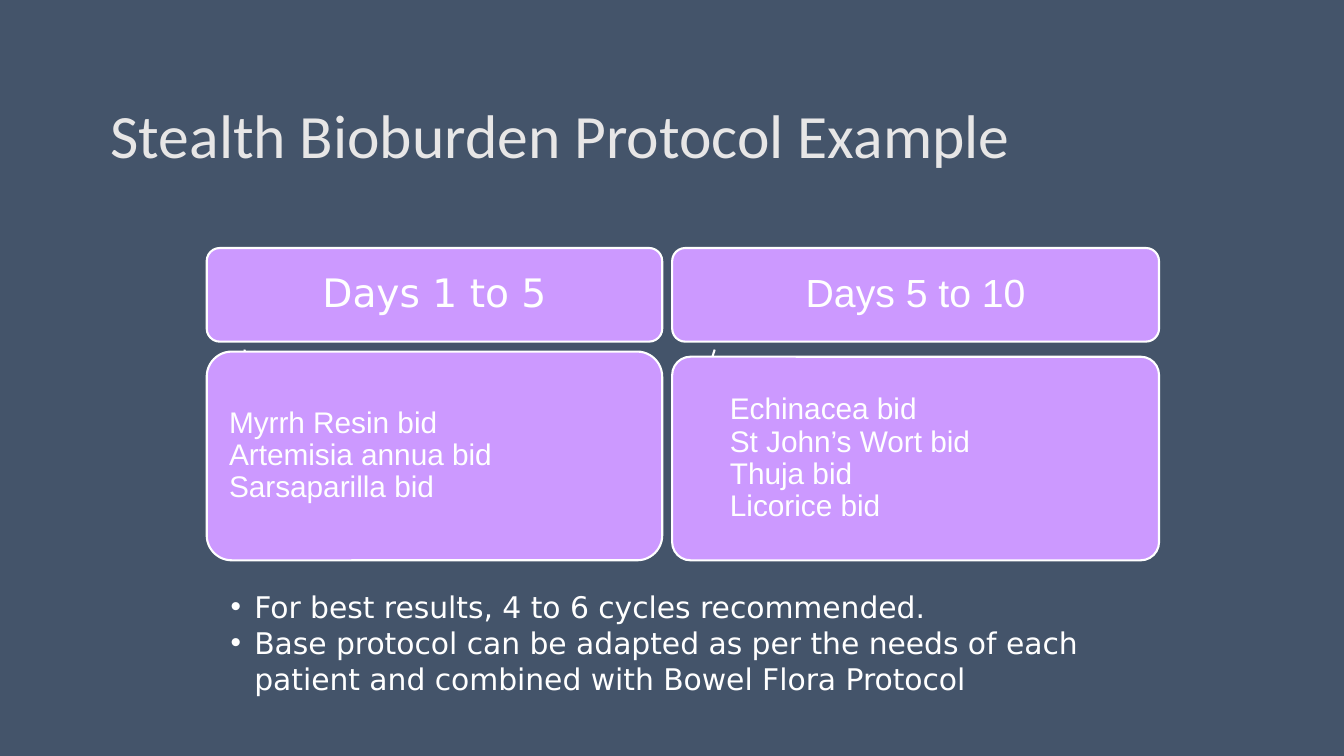
from lxml import etree
from pptx import Presentation
from pptx.dml.color import RGBColor
from pptx.enum.shapes import MSO_CONNECTOR, MSO_SHAPE
from pptx.enum.text import MSO_ANCHOR, PP_ALIGN
from pptx.oxml.ns import qn
from pptx.util import Cm, Pt

ROUNDED = MSO_SHAPE.ROUNDED_RECTANGLE
STRAIGHT = MSO_CONNECTOR.STRAIGHT
MIDDLE, BOTTOM, TOP = MSO_ANCHOR.MIDDLE, MSO_ANCHOR.BOTTOM, MSO_ANCHOR.TOP
LEFT, CENTER = PP_ALIGN.LEFT, PP_ALIGN.CENTER

COLORS = {"background": "44546A", "title": "E7E6E6", "card": "CC99FF", "white": "FFFFFF"}

HEADER_TOP, HEADER_HEIGHT = 6.25, 2.36
BODY_BOTTOM = 14.12
LINK_TOP = 8.81
COLUMNS = [
    {"left": 5.21, "width": 11.48, "header": "Days 1 to 5", "font": "DejaVu Sans",
     "body_top": 8.86, "radius": 0.12, "indent": 0.33, "link": (6.17, 5.56, 11.76),
     "items": ["Myrrh Resin bid", "Artemisia annua bid", "Sarsaparilla bid"]},
    {"left": 16.94, "width": 12.27, "header": "Days 5 to 10", "font": "Arial",
     "body_top": 8.99, "radius": 0.09, "indent": 1.27, "link": (18.01, 17.15, 11.56),
     "items": ["Echinacea bid", "St John’s Wort bid", "Thuja bid", "Licorice bid"]},
]
NOTES = [
    "For best results, 4 to 6 cycles recommended.",
    "Base protocol can be adapted as per the needs of each patient "
    "and combined with Bowel Flora Protocol",
]


def color(name):
    return RGBColor.from_string(COLORS[name])


def write(shape, lines, font, size, fill="white", anchor=MIDDLE, align=LEFT,
          spacing=0.9, indent=0, bullet=False):
    """Fill a shape with one paragraph per line."""
    frame = shape.text_frame
    frame.word_wrap = True
    frame.vertical_anchor = anchor
    for number, line in enumerate(lines):
        para = frame.paragraphs[0] if number == 0 else frame.add_paragraph()
        para.alignment = align
        para.line_spacing = spacing
        span = para.add_run()
        span.text = line
        for key, value in {"name": font, "size": Pt(size)}.items():
            setattr(span.font, key, value)
        span.font.color.rgb = color(fill)
        properties = para._p.get_or_add_pPr()
        properties.set("marL", str(Cm(indent)))
        if bullet:
            properties.set("indent", str(-Cm(indent)))
            etree.SubElement(properties, qn("a:buFont")).set("typeface", "Arial")
            etree.SubElement(properties, qn("a:buChar")).set("char", "•")


def add_text(slide, left, top, width, height, lines, **style):
    box = slide.shapes.add_textbox(Cm(left), Cm(top), Cm(width), Cm(height))
    write(box, lines, **style)


def add_card(slide, left, top, width, height, radius, lines, **style):
    card = slide.shapes.add_shape(ROUNDED, Cm(left), Cm(top), Cm(width), Cm(height))
    card.adjustments[0] = radius
    card.shadow.inherit = False
    card.fill.solid()
    card.fill.fore_color.rgb = color("card")
    card.line.color.rgb = color("white")
    card.line.width = Pt(1.5)
    margins = {"margin_left": 0.05, "margin_right": 0.05,
               "margin_top": 0.1, "margin_bottom": 0.1}
    for key, value in margins.items():
        setattr(card.text_frame, key, Cm(value))
    write(card, lines, **style)


def add_link(slide, start_x, end_x, end_y):
    link = slide.shapes.add_connector(STRAIGHT, Cm(start_x), Cm(LINK_TOP), Cm(end_x), Cm(end_y))
    link.line.color.rgb = color("white")
    link.line.width = Pt(1.5)
    etree.SubElement(link._element.spPr, qn("a:effectLst"))


def add_column(slide, column):
    left, width, top = column["left"], column["width"], column["body_top"]
    add_card(slide, left, HEADER_TOP, width, HEADER_HEIGHT, 0.14,
             [column["header"]], font=column["font"], size=28, align=CENTER)
    # The link runs behind the body card
    add_link(slide, *column["link"])
    add_card(slide, left, top, width, BODY_BOTTOM - top, column["radius"],
             column["items"], font="Arial", size=21.3, indent=column["indent"])


def main():
    deck = Presentation()
    deck.slide_width, deck.slide_height = Cm(33.87), Cm(19.05)
    slide = deck.slides.add_slide(deck.slide_layouts[6])
    slide.background.fill.solid()
    slide.background.fill.fore_color.rgb = color("background")

    # Title
    add_text(slide, 2.54, 1.27, 28.78, 3.18, ["Stealth Bioburden Protocol Example"],
             font="Calibri", size=44, fill="title", anchor=BOTTOM)

    # Protocol columns
    for column in COLUMNS:
        add_column(slide, column)

    # Notes below the columns
    add_text(slide, 5.56, 14.71, 22.83, 3, NOTES, font="DejaVu Sans", size=21.3,
             anchor=TOP, spacing=1.0, indent=0.6, bullet=True)

    deck.save("out.pptx")


if __name__ == "__main__":
    main()
